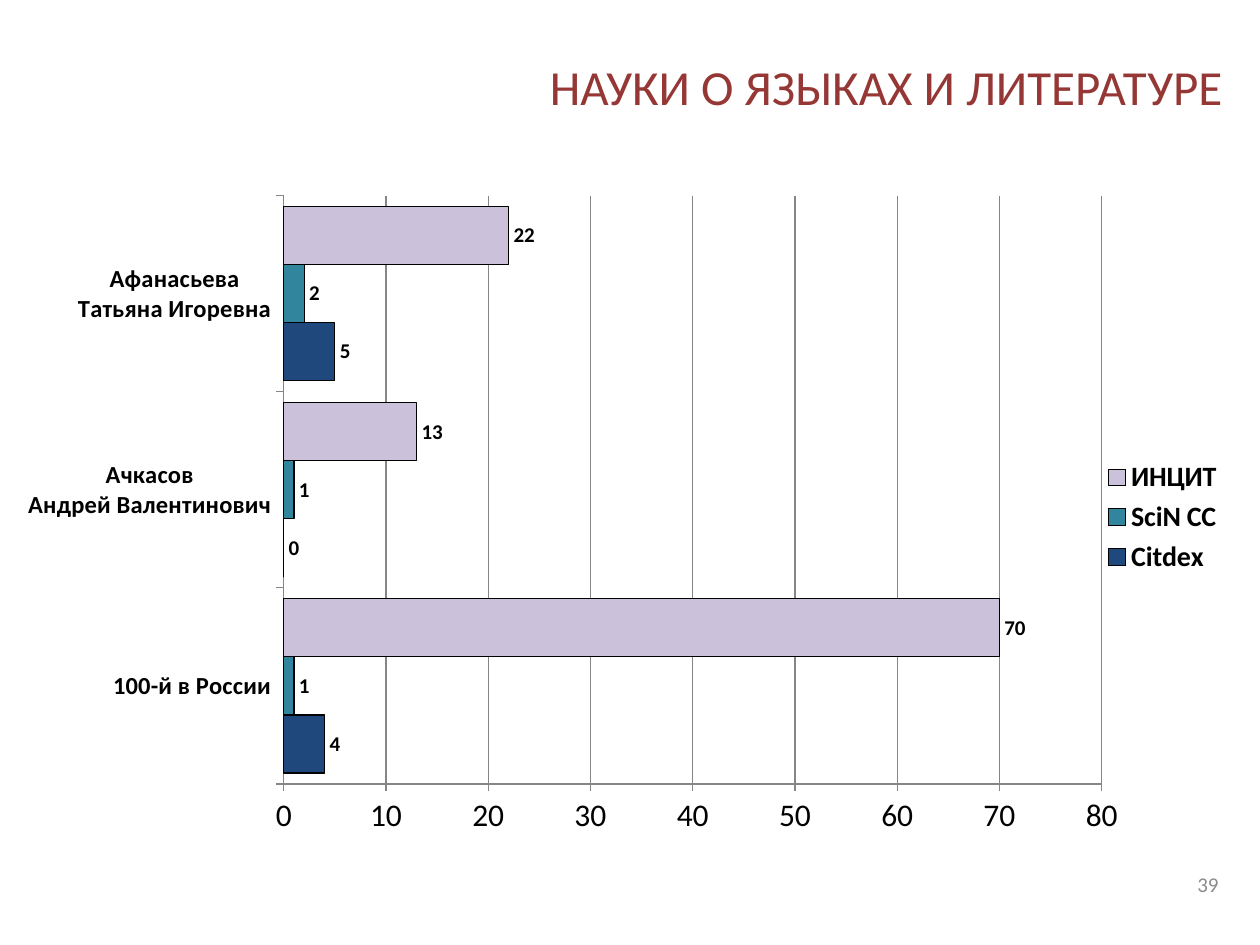
"""Builds a slide with a bar chart of citation indicators for language and literature studies."""
from dataclasses import dataclass

from lxml.etree import SubElement
from pptx import Presentation
from pptx.chart.chart import Chart
from pptx.chart.data import CategoryChartData
from pptx.dml.color import RGBColor
from pptx.enum.chart import XL_CHART_TYPE, XL_LABEL_POSITION, XL_LEGEND_POSITION, XL_TICK_MARK
from pptx.enum.text import MSO_ANCHOR, MSO_AUTO_SIZE, PP_ALIGN
from pptx.oxml.ns import qn
from pptx.util import Inches, Pt

HUES = {
    "title": "953735",
    "text": "000000",
    "page": "8C8C8C",
    "grid": "868686",
    "navy": "1F497D",
    "teal": "31859C",
    "lilac": "CCC1DA",
}
FACE = "Calibri"


@dataclass
class Index:
    name: str
    scores: tuple[int, ...]
    hue: str


NAMES = ("100-й в России", "Ачкасов\nАндрей Валентинович", "Афанасьева\nТатьяна Игоревна")
BARS = (
    Index("Citdex", (4, 0, 5), "navy"),
    Index("SciN CC", (1, 1, 2), "teal"),
    Index("ИНЦИТ", (70, 13, 22), "lilac"),
)


def tint(hue: str) -> RGBColor:
    return RGBColor.from_string(HUES[hue])


def style(font, size: float, hue: str = "text", bold: bool = False) -> None:
    font.name, font.size, font.bold = FACE, Pt(size), bold
    font.color.rgb = tint(hue)


def write(shape, text: str, *, box: tuple[float, ...], size: float, hue: str) -> None:
    shape.left, shape.top, shape.width, shape.height = map(Inches, box)
    frame = shape.text_frame
    frame.word_wrap = True
    frame.auto_size = MSO_AUTO_SIZE.NONE
    frame.vertical_anchor = MSO_ANCHOR.MIDDLE
    line = frame.paragraphs[0]
    line.alignment = PP_ALIGN.RIGHT
    run = line.add_run()
    run.text = text
    style(run.font, size, hue)


def place(chart: Chart, x: float, y: float, w: float, h: float) -> None:
    area = chart.element.find(".//" + qn("c:plotArea"))
    for old in area.findall(qn("c:layout")):
        area.remove(old)
    layout = SubElement(area, qn("c:layout"))
    area.insert(0, layout)
    manual = SubElement(layout, qn("c:manualLayout"))
    parts = {"layoutTarget": "inner", "xMode": "edge", "yMode": "edge",
             "x": x, "y": y, "w": w, "h": h}
    for tag, value in parts.items():
        SubElement(manual, qn(f"c:{tag}")).set("val", str(value))


def paint(series, index: Index) -> None:
    series.format.fill.solid()
    series.format.fill.fore_color.rgb = tint(index.hue)
    series.format.line.color.rgb = tint("text")
    series.format.line.width = Pt(0.75)
    series.invert_if_negative = False
    labels = series.data_labels
    labels.show_value = True
    labels.position = XL_LABEL_POSITION.OUTSIDE_END
    style(labels.font, 12, bold=True)


def draw(slide) -> None:
    data = CategoryChartData()
    data.categories = NAMES
    for index in BARS:
        data.add_series(index.name, index.scores)
    box = map(Inches, (0.12, 1.39, 9.69, 5.43))
    chart = slide.shapes.add_chart(XL_CHART_TYPE.BAR_CLUSTERED, *box, data).chart
    style(chart.font, 18)
    chart.has_title = False
    chart.has_legend = True
    chart.legend.position = XL_LEGEND_POSITION.RIGHT
    chart.legend.include_in_layout = False
    style(chart.legend.font, 16, bold=True)
    place(chart, 0.22, 0.03, 0.67, 0.86)

    plot = chart.plots[0]
    plot.gap_width = 38
    plot.vary_by_categories = False
    for series, index in zip(plot.series, BARS):
        paint(series, index)

    names, scale = chart.category_axis, chart.value_axis
    for axis in (names, scale):
        axis.major_tick_mark = XL_TICK_MARK.OUTSIDE
        axis.format.line.color.rgb = tint("grid")
    style(names.tick_labels.font, 14, bold=True)
    style(scale.tick_labels.font, 18)
    scale.minimum_scale, scale.maximum_scale, scale.major_unit = 0, 80, 10
    scale.has_major_gridlines = True
    scale.major_gridlines.format.line.color.rgb = tint("grid")


def main() -> None:
    deck = Presentation()
    deck.slide_width, deck.slide_height = Inches(10), Inches(7.5)
    slide = deck.slides.add_slide(deck.slide_layouts[5])
    write(slide.shapes.title, "НАУКИ О ЯЗЫКАХ И ЛИТЕРАТУРЕ",
          box=(2.56, 0.3, 7.24, 0.77), size=28, hue="title")
    draw(slide)
    page = slide.shapes.add_textbox(0, 0, 0, 0)
    write(page, "39", box=(7.44, 6.82, 2.33, 0.4), size=12, hue="page")
    deck.save("out.pptx")


if __name__ == "__main__":
    main()
